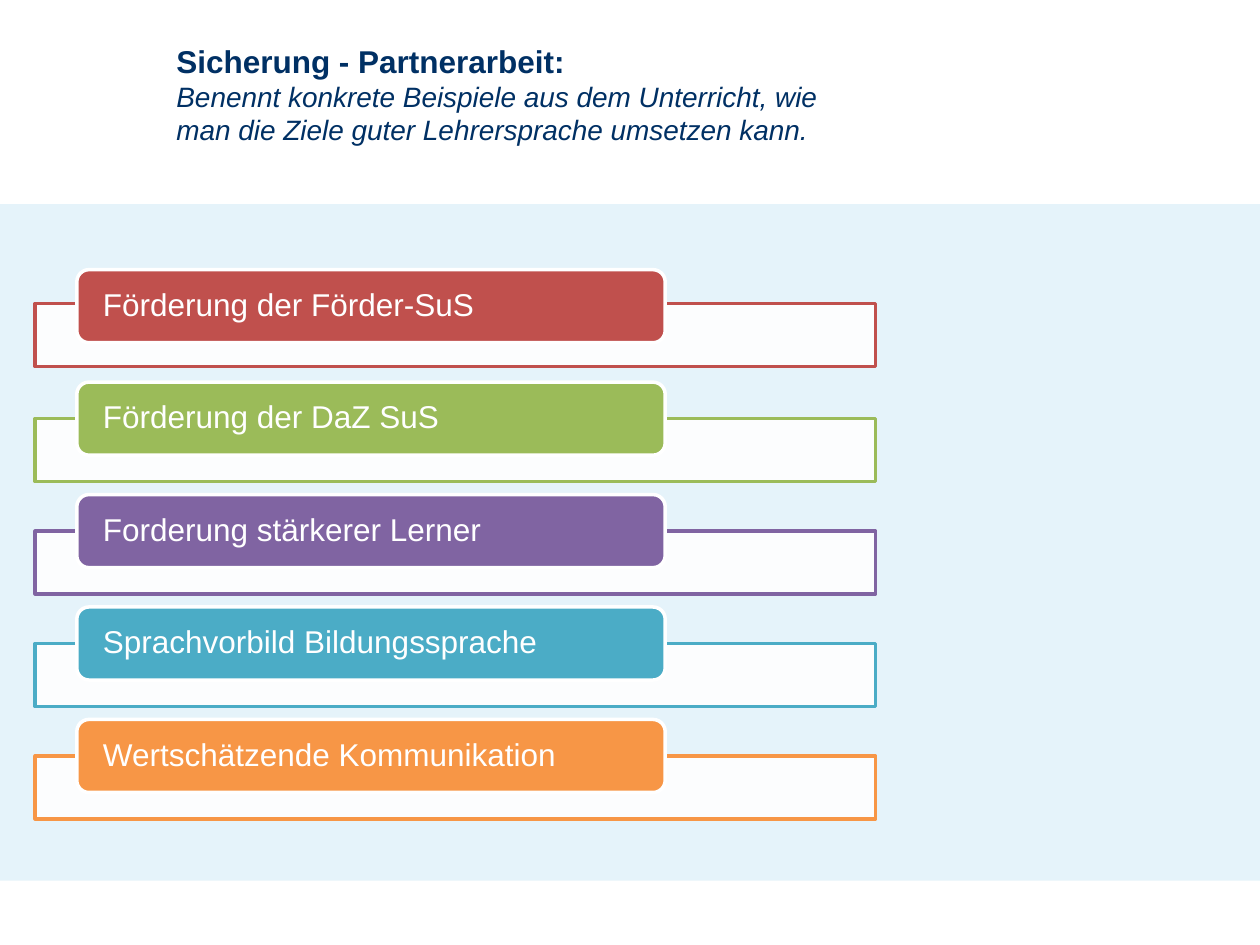
import dataclasses

import pptx
import pptx.dml.color
import pptx.enum.shapes
import pptx.enum.text
import pptx.oxml
import pptx.oxml.ns
import pptx.util

Inches = pptx.util.Inches
Pt = pptx.util.Pt
Shape = pptx.enum.shapes.MSO_SHAPE
Align = pptx.enum.text.PP_ALIGN
Anchor = pptx.enum.text.MSO_ANCHOR

WHITE = "FFFFFF"
NAVY = "003064"
TOP = 2.14
STEP = 0.8925


@dataclasses.dataclass
class Goal:
    text: str
    color: str
    drop: float = 0.29  # from the top of the tab to the top of its bar


GOALS = [
    Goal("Förderung der Förder-SuS", "C0504D", 0.27),
    Goal("Förderung der DaZ SuS", "9BBB59"),
    Goal("Forderung stärkerer Lerner", "8064A2"),
    Goal("Sprachvorbild Bildungssprache", "4BACC6"),
    Goal("Wertschätzende Kommunikation", "F79646"),
]


def rgb(code: str):
    return pptx.dml.color.RGBColor.from_string(code)


def fade(shape, percent: int) -> None:
    """Set the opacity of a solid fill."""
    color = shape.fill._xPr.find(".//" + pptx.oxml.ns.qn("a:srgbClr"))
    space = pptx.oxml.ns.nsdecls("a")
    color.append(pptx.oxml.parse_xml(f'<a:alpha {space} val="{percent * 1000}"/>'))


def box(slide, kind, left: float, top: float, width: float, height: float,
        fill: str, line: str | None = None, alpha: int = 100):
    shape = slide.shapes.add_shape(
        kind, Inches(left), Inches(top), Inches(width), Inches(height))
    shape.shadow.inherit = False
    shape.fill.solid()
    shape.fill.fore_color.rgb = rgb(fill)
    if alpha < 100:
        fade(shape, alpha)
    if line:
        shape.line.color.rgb = rgb(line)
        shape.line.width = Pt(2)
    else:
        shape.line.fill.background()
    return shape


def write(par, text: str, *, size: int = 18, color: str = WHITE,
          bold: bool = False, italic: bool = False, space: float = 1.0) -> None:
    par.alignment = Align.LEFT
    par.line_spacing = space
    run = par.add_run()
    run.text = text
    font = run.font
    font.name = "Arial"
    font.size = Pt(size)
    font.color.rgb = rgb(color)
    font.bold = bold
    font.italic = italic


def head(slide) -> None:
    title = slide.shapes.title
    title.left, title.top = Inches(1.3), Inches(0.28)
    title.width, title.height = Inches(5.35), Inches(1.14)
    frame = title.text_frame
    frame.auto_size = pptx.enum.text.MSO_AUTO_SIZE.NONE
    frame.word_wrap = True
    frame.vertical_anchor = Anchor.TOP
    write(frame.paragraphs[0], "Sicherung - Partnerarbeit:", color=NAVY, bold=True)
    write(frame.add_paragraph(),
          "Benennt konkrete Beispiele aus dem Unterricht, "
          "wie man die Ziele guter Lehrersprache umsetzen kann.",
          size=16, color=NAVY, italic=True)


def draw(slide, goal: Goal, top: float) -> None:
    box(slide, Shape.RECTANGLE, 0.28, top + goal.drop, 6.67, 0.5,
        WHITE, goal.color, alpha=90)
    tab = box(slide, Shape.ROUNDED_RECTANGLE, 0.61, top, 4.67, 0.58,
              goal.color, WHITE)
    frame = tab.text_frame
    frame.word_wrap = True
    frame.vertical_anchor = Anchor.MIDDLE
    frame.margin_left = frame.margin_right = Inches(0.18)
    frame.margin_top = frame.margin_bottom = 0
    write(frame.paragraphs[0], goal.text, space=0.9)


def main() -> None:
    deck = pptx.Presentation()
    deck.slide_width, deck.slide_height = Inches(10), Inches(7.5)
    slide = deck.slides.add_slide(deck.slide_layouts[5])

    # Pale band behind the list
    box(slide, Shape.RECTANGLE, 0, 1.62, 10, 5.37, "008CCF", alpha=10)

    # Task
    head(slide)

    # Goals, evenly spaced
    for row, goal in enumerate(GOALS):
        draw(slide, goal, TOP + row * STEP)

    deck.save("out.pptx")


if __name__ == "__main__":
    main()
